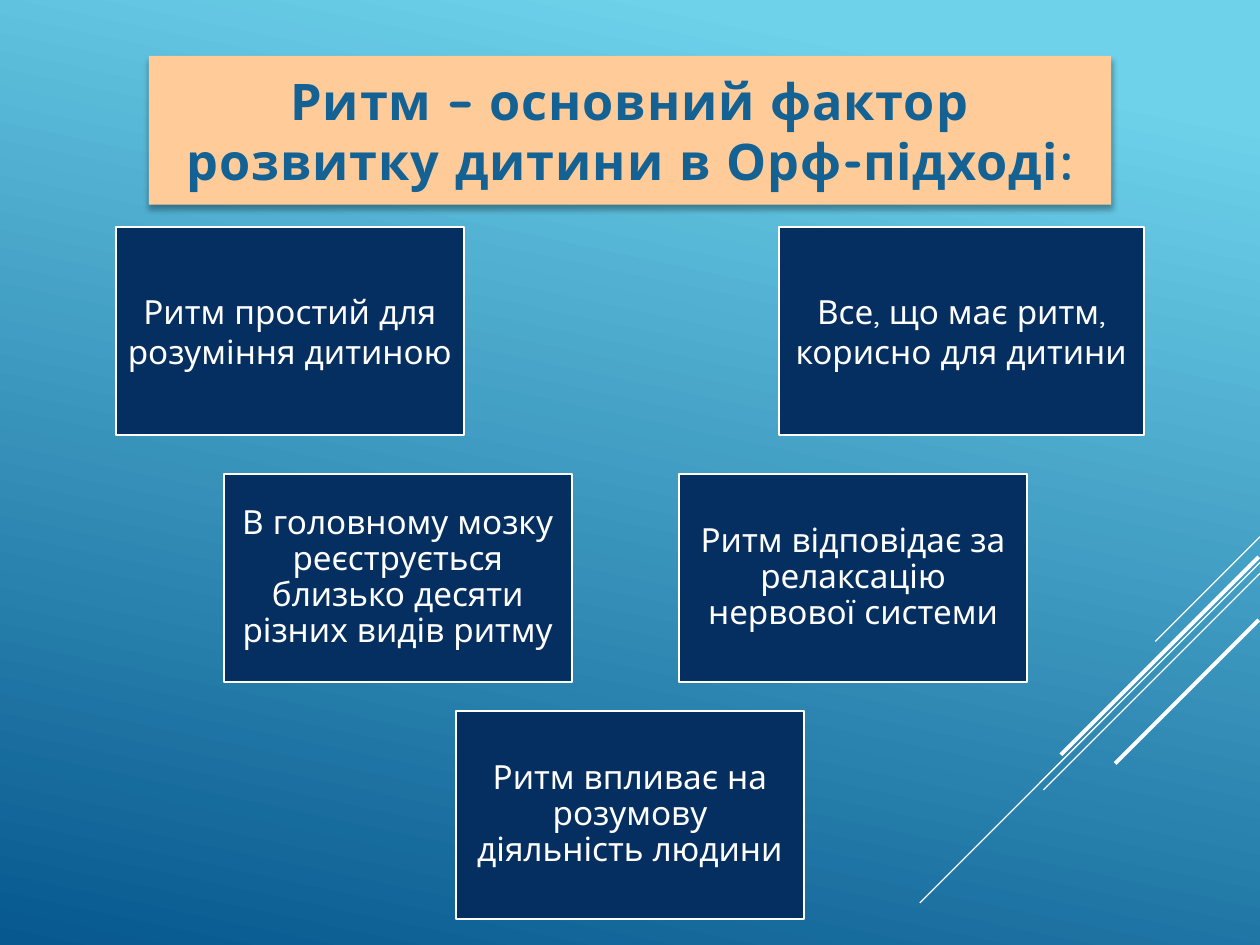
from lxml import etree
from pptx import Presentation
from pptx.dml.color import RGBColor
from pptx.enum.shapes import MSO_CONNECTOR, MSO_SHAPE
from pptx.enum.text import MSO_ANCHOR, PP_ALIGN
from pptx.oxml.ns import qn
from pptx.util import Pt

RECT = MSO_SHAPE.RECTANGLE
LINE = MSO_CONNECTOR.STRAIGHT
MID = MSO_ANCHOR.MIDDLE
CENTER = PP_ALIGN.CENTER
FONT = "Quicksand"
WHITE = "FFFFFF"
WIDE, HIGH = 198.7, 118.8
ROWS = (129.6, 270.8, 406.2)

RAYS = [
    (720, 306.7, 660.2, 366.5, 0.75),
    (720, 321.4, 525.6, 516, 0.75),
    (720, 327.6, 596.2, 451.4, 0.75),
    (719.3, 318.2, 606.2, 431.3, 2.25),
    (719.3, 354.2, 637.2, 436.3, 2.25),
]

FACTS = [
    ("Ритм простий для розуміння дитиною", 66.3, ROWS[0], WIDE, 1),
    ("Все, що має ритм, корисно для дитини", 445, ROWS[0], 208.8, 1),
    ("В головному мозку реєструється близько десяти різних видів ритму",
     128, ROWS[1], WIDE, 0.9),
    ("Ритм відповідає за релаксацію нервової системи",
     388.2, ROWS[1], WIDE, 0.9),
    ("Ритм впливає на розумову діяльність людини",
     260.7, ROWS[2], WIDE, 0.9),
]


def color(code):
    return RGBColor.from_string(code)


def paint(slide):
    fill = slide.background.fill
    fill.gradient()
    fill.gradient_angle = 258
    stops = ((0.1, "6ED2EB"), (1, "06588E"))
    for stop, (place, code) in zip(fill.gradient_stops, stops):
        stop.position = place
        stop.color.rgb = color(code)


def add_ray(slide, x1, y1, x2, y2, width):
    ray = slide.shapes.add_connector(LINE, Pt(x1), Pt(y1), Pt(x2), Pt(y2))
    ray.line.color.rgb = color(WHITE)
    ray.line.width = Pt(width)
    etree.SubElement(ray.element.spPr, qn("a:effectLst"))


def add_box(slide, left, top, width, height, fill, edge=None):
    box = slide.shapes.add_shape(RECT, Pt(left), Pt(top), Pt(width), Pt(height))
    box.shadow.inherit = False
    box.fill.solid()
    box.fill.fore_color.rgb = color(fill)
    if edge:
        box.line.color.rgb = color(edge)
        box.line.width = Pt(1)
    else:
        box.line.fill.background()
    return box


def add_shade(box):
    effects = box.element.spPr.find(qn("a:effectLst"))
    shade = etree.SubElement(
        effects, qn("a:outerShdw"), blurRad=str(Pt(3.5)), dist=str(Pt(2.2)),
        dir="5400000", algn="ctr", rotWithShape="0")
    tint = etree.SubElement(shade, qn("a:srgbClr"), val="000000")
    etree.SubElement(tint, qn("a:alpha"), val="32000")


def put_text(box, text, size, ink, bold=False, inset=None, lead=1, track=0):
    frame = box.text_frame
    frame.word_wrap = True
    frame.vertical_anchor = MID
    if inset is not None:
        frame.margin_left = frame.margin_right = Pt(inset)
        frame.margin_top = frame.margin_bottom = Pt(inset)
    para = frame.paragraphs[0]
    para.alignment = CENTER
    para.line_spacing = lead
    run = para.add_run()
    run.text = text
    run.font.name = FONT
    run.font.size = Pt(size)
    run.font.bold = bold
    run.font.color.rgb = color(ink)
    if track:
        run.font._element.set("spc", str(int(track * 100)))


def main():
    deck = Presentation()
    deck.slide_width, deck.slide_height = Pt(720), Pt(540)
    slide = deck.slides.add_slide(deck.slide_layouts[6])
    paint(slide)
    for ray in RAYS:
        add_ray(slide, *ray)
    title = add_box(slide, 85, 31.9, 550, 85, "FFCC99")
    add_shade(title)
    put_text(title, "Ритм – основний фактор розвитку дитини в Орф-підході:",
             size=28.8, ink="146194", bold=True, track=0.5)
    for text, left, top, width, lead in FACTS:
        box = add_box(slide, left, top, width, HIGH, "052F61", edge=WHITE)
        put_text(box, text, size=19, ink=WHITE, inset=5.7, lead=lead)
    deck.save("out.pptx")


if __name__ == "__main__":
    main()
